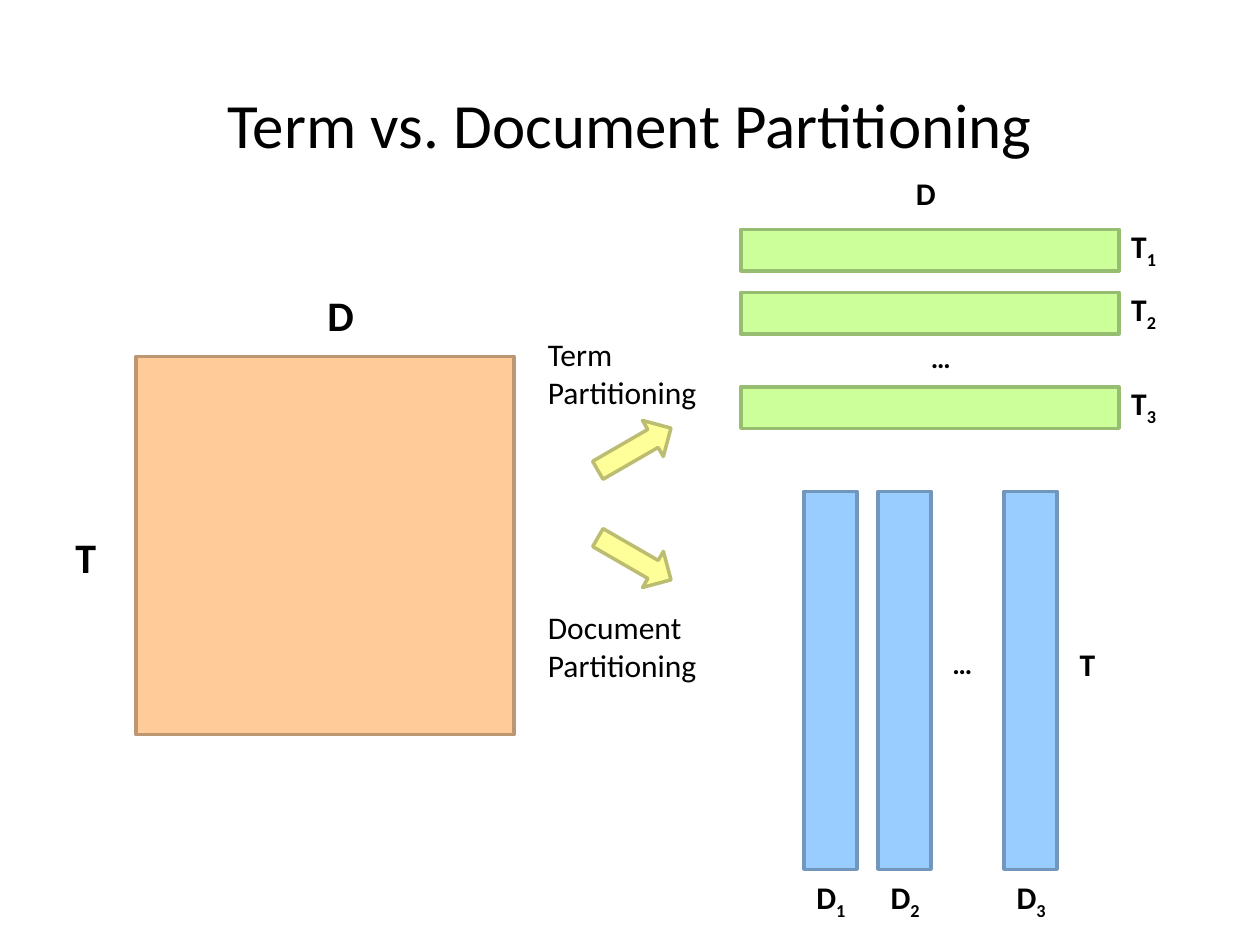
from pptx import Presentation
from pptx.dml.color import RGBColor
from pptx.enum.shapes import MSO_SHAPE
from pptx.enum.text import MSO_ANCHOR, MSO_AUTO_SIZE, PP_ALIGN
from pptx.util import Inches, Pt

RECT, ARROW = MSO_SHAPE.RECTANGLE, MSO_SHAPE.RIGHT_ARROW
MIDDLE, FIT, CENTER = MSO_ANCHOR.MIDDLE, MSO_AUTO_SIZE.SHAPE_TO_FIT_TEXT, PP_ALIGN.CENTER

TITLE = "Term vs. Document Partitioning"
ORANGE, BLUE = ("FFCC99", "BD9771"), ("99CCFF", "7197BD")
GREEN, YELLOW = ("CCFF99", "97BD71"), ("FFFF99", "BDBD71")
SIDE, ROW, COL = 3, 0.33, 0.42
ROWS = [("1", 1.82), ("2", 2.32), ("3", 3.07)]
COLS = [("1", 6.38), ("2", 6.97), ("3", 7.97)]
ROW_X, COL_Y = 5.88, 3.9
ARROWS = [(3.4, 330), (4.27, 30)]
LABELS = [
    ("T", 0.5, 4.17, 0.46, 0.5, 24, True),
    ("D", 2.5, 2.25, 0.48, 0.5, 24, True),
    ("D", 7.17, 1.33, 0.41, 0.4, 18, True),
    ("T", 8.47, 5.07, 0.4, 0.4, 18, True),
    ("…", 7.29, 2.65, 0.43, 0.37, 16, True),
    ("…", 7.46, 5.08, 0.43, 0.37, 16, True),
    ("Term \vPartitioning", 4.25, 2.61, 1.38, 0.71, 18, False),
    ("Document\vPartitioning", 4.25, 4.78, 1.38, 0.71, 18, False),
]


def color(code):
    return RGBColor.from_string(code)


def block(slide, x, y, w, h, tones, kind=RECT, turn=0):
    shape = slide.shapes.add_shape(kind, Inches(x), Inches(y), Inches(w), Inches(h))
    fill, line = tones
    shape.shadow.inherit = False
    shape.fill.solid()
    shape.fill.fore_color.rgb = color(fill)
    shape.line.color.rgb = color(line)
    shape.line.width = Pt(2)
    shape.rotation = turn


def label(slide, text, x, y, w, h, size, bold, sub=""):
    frame = slide.shapes.add_textbox(Inches(x), Inches(y), Inches(w), Inches(h)).text_frame
    frame.word_wrap = False
    frame.auto_size = FIT
    para = frame.paragraphs[0]
    para.text = text
    font = para.font
    font.name, font.size, font.bold = "Calibri", Pt(size), bold
    font.color.rgb = color("000000")
    if sub:
        run = para.add_run()
        run.text = sub
        run.font._element.set("baseline", "-25000")
    return frame


def main():
    """Build the slide on term and document partitioning."""
    deck = Presentation()
    deck.slide_width, deck.slide_height = Inches(10), Inches(7.5)
    slide = deck.slides.add_slide(deck.slide_layouts[6])

    block(slide, 1.08, 2.83, SIDE, SIDE, ORANGE)
    for sub, y in ROWS:
        block(slide, ROW_X, y, SIDE, ROW, GREEN)
        label(slide, "T", ROW_X + SIDE, y - 0.07, 0.5, 0.4, 18, True, sub)
    for sub, x in COLS:
        block(slide, x, COL_Y, COL, SIDE, BLUE)
        label(slide, "D", x, COL_Y + SIDE + 0.02, 0.51, 0.4, 18, True, sub)
    for y, turn in ARROWS:
        block(slide, 4.7, y, 0.67, ROW, YELLOW, ARROW, turn)
    for item in LABELS:
        label(slide, *item)

    head = label(slide, TITLE, 0, 0.6, 10, 0.75, 36, False)
    head.word_wrap = True
    head.auto_size = MSO_AUTO_SIZE.NONE
    head.vertical_anchor = MIDDLE
    head.paragraphs[0].alignment = CENTER
    deck.save("out.pptx")


if __name__ == "__main__":
    main()
